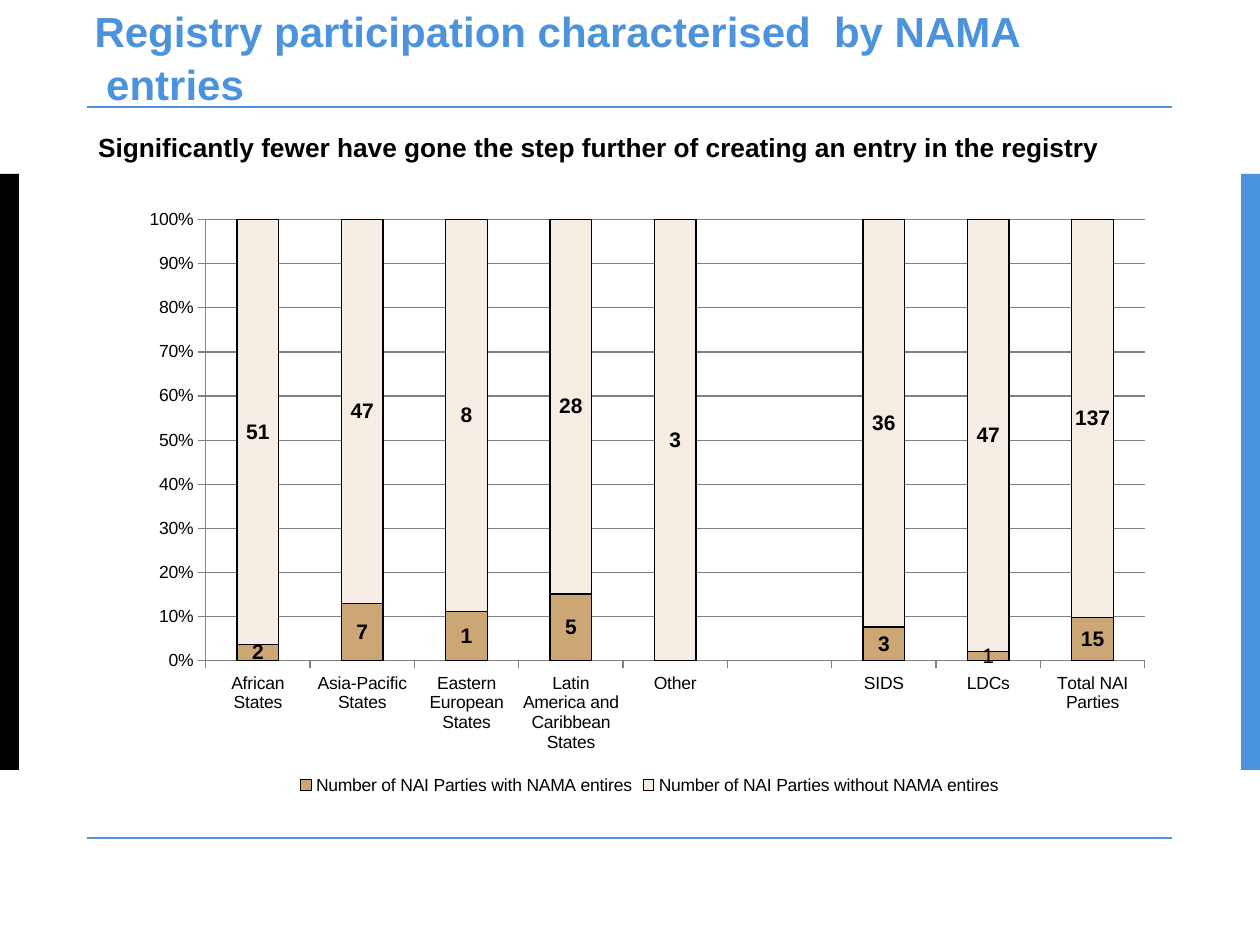
"""Build a slide on registry participation with a 100% stacked column chart."""
from dataclasses import dataclass

import lxml.etree
import pptx
import pptx.chart.data
import pptx.dml.color
import pptx.enum.chart
import pptx.enum.shapes
import pptx.enum.text
import pptx.oxml
import pptx.oxml.ns
import pptx.util

Pt = pptx.util.Pt
FONT = "Arial"
COLORS = {"blue": "4B93DC", "black": "000000", "tan": "CCA674", "cream": "F5EDE3", "grid": "808080"}


@dataclass
class Bar:
    left: float
    color: str


@dataclass
class Series:
    name: str
    values: tuple
    color: str


BARS = [Bar(0, "black"), Bar(709.2, "blue")]
RULE_TOPS = [61.2, 478.8]
CATEGORIES = ["African States", "Asia-Pacific States", "Eastern European States",
              "Latin America and Caribbean States", "Other", "", "SIDS", "LDCs", "Total NAI Parties"]
SERIES = [
    Series("Number of NAI Parties with NAMA entires", (2, 7, 1, 5, 0, None, 3, 1, 15), "tan"),
    Series("Number of NAI Parties without NAMA entires", (51, 47, 8, 28, 3, None, 36, 47, 137), "cream"),
]
PLOT_AREA = {"x": 0.07, "y": 0.04, "w": 0.91, "h": 0.73}
LDC_INDEX = CATEGORIES.index("LDCs")


def rgb(name: str) -> pptx.dml.color.RGBColor:
    return pptx.dml.color.RGBColor.from_string(COLORS[name])


def set_font(font, *, size: float, color: str = "black", bold: bool = False) -> None:
    font.name, font.size, font.bold = FONT, Pt(size), bold
    font.color.rgb = rgb(color)


def set_line(line, color: str, width: float) -> None:
    line.color.rgb = rgb(color)
    line.width = Pt(width)


def add_text(p, text: str, *, size: float, color: str = "black", bold: bool = True,
             align: str = "LEFT", spacing: float | None = None, indent: float = 0) -> None:
    if indent:
        p._p.get_or_add_pPr().set("marL", str(Pt(indent)))
    p.alignment = getattr(pptx.enum.text.PP_ALIGN, align)
    if spacing:
        p.line_spacing = Pt(spacing)
    r = p.add_run()
    r.text = text
    set_font(r.font, size=size, color=color, bold=bold)


def add_bar(s, bar: Bar) -> None:
    sp = s.shapes.add_shape(pptx.enum.shapes.MSO_SHAPE.RECTANGLE,
                            Pt(bar.left), Pt(99.4), Pt(10.8), Pt(340.6))
    sp.shadow.inherit = False
    sp.fill.solid()
    sp.fill.fore_color.rgb = rgb(bar.color)
    sp.line.fill.background()


def add_rule(s, top: float) -> None:
    line = s.shapes.add_connector(pptx.enum.shapes.MSO_CONNECTOR.STRAIGHT,
                                  Pt(49.7), Pt(top), Pt(669.6), Pt(top))
    set_line(line.line, "blue", 1)
    lxml.etree.SubElement(line._element.spPr, pptx.oxml.ns.qn("a:effectLst"))


def set_title(s) -> None:
    sp = s.shapes.title
    sp.left, sp.top, sp.width, sp.height = Pt(54), Pt(9.4), Pt(620), Pt(45.4)
    tf = sp.text_frame
    tf.margin_left = tf.margin_top = tf.margin_right = tf.margin_bottom = 0
    tf.auto_size = pptx.enum.text.MSO_AUTO_SIZE.NONE
    tf.vertical_anchor = pptx.enum.text.MSO_ANCHOR.MIDDLE
    style = {"size": 24, "color": "blue", "spacing": 30}
    add_text(tf.paragraphs[0], "Registry participation characterised  by NAMA", **style)
    add_text(tf.add_paragraph(), "entries", indent=6.7, **style)


def add_subtitle(s) -> None:
    tf = s.shapes.add_textbox(Pt(24.5), Pt(71.3), Pt(635), Pt(25.2)).text_frame
    tf.word_wrap = True
    add_text(tf.paragraphs[0],
             "Significantly fewer have gone the step further of creating an entry in the registry",
             size=15, align="CENTER")


def set_plot_area(chart) -> None:
    plot_area = chart._chartSpace.chart.plotArea
    for old in plot_area.findall(pptx.oxml.ns.qn("c:layout")):
        plot_area.remove(old)
    sizes = "".join(f'<c:{key} val="{value}"/>' for key, value in PLOT_AREA.items())
    plot_area.insert(0, pptx.oxml.parse_xml(
        f'<c:layout {pptx.oxml.ns.nsdecls("c")}><c:manualLayout><c:layoutTarget val="inner"/>'
        f'<c:xMode val="edge"/><c:yMode val="edge"/>{sizes}</c:manualLayout></c:layout>'))


def style_series(series, color: str) -> None:
    series.format.fill.solid()
    series.format.fill.fore_color.rgb = rgb(color)
    set_line(series.format.line, "black", 0.75)
    labels = series.data_labels
    labels.show_value = True
    labels.number_format, labels.number_format_is_linked = "0;;;", False
    set_font(labels.font, size=12, bold=True)


def add_chart(s) -> None:
    data = pptx.chart.data.CategoryChartData()
    data.categories = CATEGORIES
    for item in SERIES:
        data.add_series(item.name, item.values)
    chart = s.shapes.add_chart(pptx.enum.chart.XL_CHART_TYPE.COLUMN_STACKED_100,
                               Pt(76.3), Pt(111.6), Pt(589.7), Pt(345.6), data).chart
    chart.has_title = False
    set_font(chart.font, size=10)
    chart.has_legend = True
    chart.legend.position = pptx.enum.chart.XL_LEGEND_POSITION.BOTTOM
    chart.legend.include_in_layout = False
    for axis in (chart.category_axis, chart.value_axis):
        axis.major_tick_mark = pptx.enum.chart.XL_TICK_MARK.OUTSIDE
        set_line(axis.format.line, "grid", 0.75)
    axis = chart.value_axis
    axis.minimum_scale, axis.maximum_scale, axis.major_unit = 0, 1, 0.1
    axis.tick_labels.number_format, axis.tick_labels.number_format_is_linked = "0%", False
    axis.has_major_gridlines = True
    set_line(axis.major_gridlines.format.line, "grid", 0.75)
    plot = chart.plots[0]
    plot.gap_width, plot.overlap, plot.vary_by_categories = 150, 100, False
    for series, item in zip(plot.series, SERIES):
        style_series(series, item.color)
    set_font(plot.series[0].points[LDC_INDEX].data_label.font, size=12)
    set_plot_area(chart)


def main() -> None:
    prs = pptx.Presentation()
    prs.slide_width, prs.slide_height = Pt(720), Pt(540)
    s = prs.slides.add_slide(prs.slide_layouts[5])
    for bar in BARS:
        add_bar(s, bar)
    for top in RULE_TOPS:
        add_rule(s, top)
    set_title(s)
    add_subtitle(s)
    add_chart(s)
    prs.save("out.pptx")


if __name__ == "__main__":
    main()
